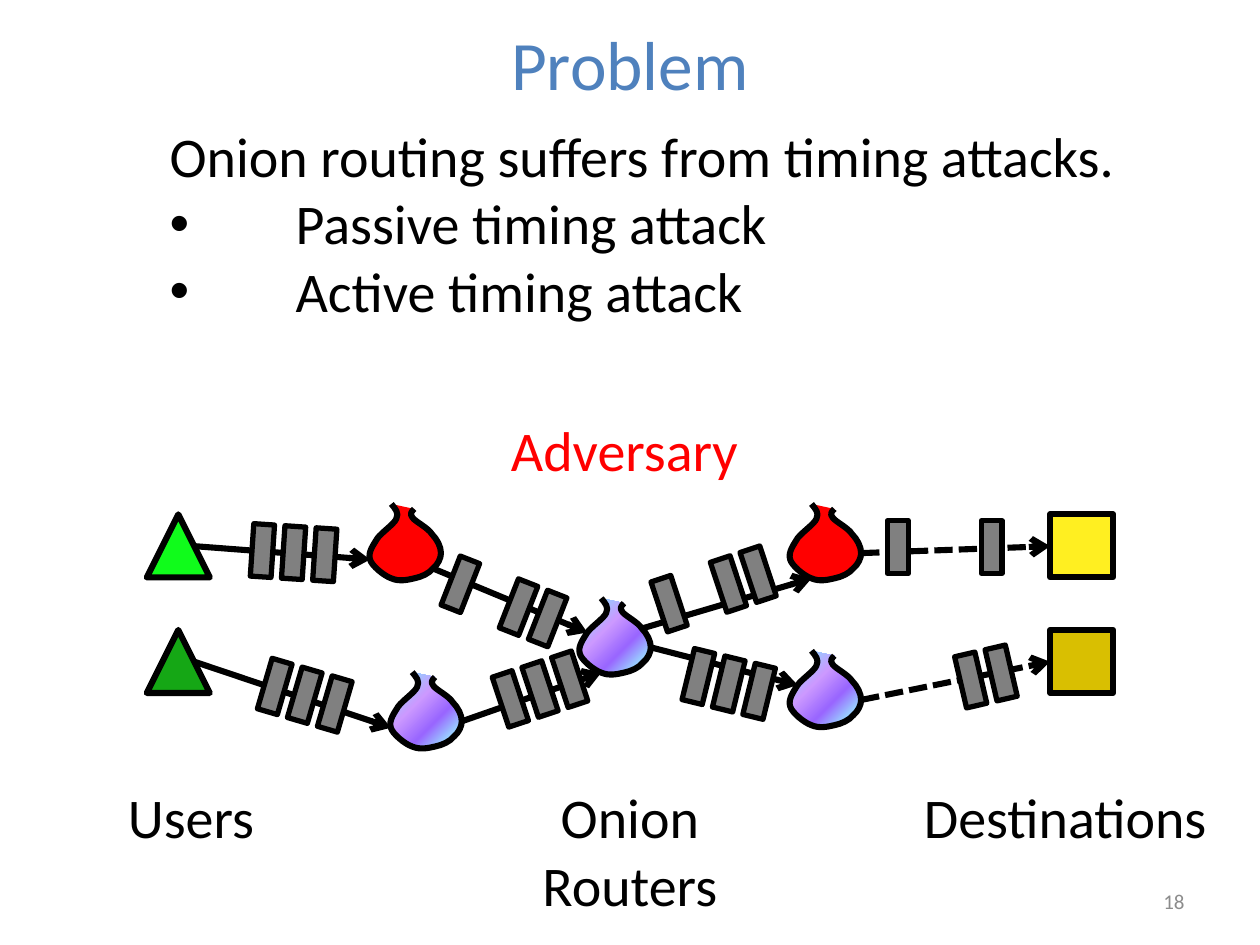
from dataclasses import dataclass
from math import cos, radians, sin

from lxml import etree
from pptx import Presentation
from pptx.dml.color import RGBColor
from pptx.enum.dml import MSO_LINE
from pptx.enum.shapes import MSO_CONNECTOR, MSO_SHAPE
from pptx.enum.text import MSO_ANCHOR, PP_ALIGN
from pptx.oxml import parse_xml
from pptx.oxml.ns import qn
from pptx.util import Cm, Pt

STRAIGHT = MSO_CONNECTOR.STRAIGHT
RECTANGLE, TRIANGLE = MSO_SHAPE.RECTANGLE, MSO_SHAPE.ISOSCELES_TRIANGLE
LEFT, CENTER, RIGHT = PP_ALIGN.LEFT, PP_ALIGN.CENTER, PP_ALIGN.RIGHT
TOP, MIDDLE = MSO_ANCHOR.TOP, MSO_ANCHOR.MIDDLE
DASH = MSO_LINE.SQUARE_DOT
DRAWING_NS = "http://schemas.openxmlformats.org/drawingml/2006/main"


@dataclass(frozen=True)
class Theme:
    font: str = "Calibri"
    title_size: float = 39.6
    body_size: float = 32
    number_size: float = 12
    link_width: float = 3.5
    packet_width: float = 3
    title: str = "4F81BD"
    ink: str = "000000"
    adversary: str = "FF0000"
    number: str = "8C8C8C"
    packet: str = "808080"
    users: tuple = ("10FC1B", "15A715")
    destinations: tuple = ("FFEF21", "D9BF01")
    onion: tuple = ((0, "CCCCFF"), (18, "99CCFF"), (36, "9966FF"),
                    (61, "CC99FF"), (82, "99CCFF"), (100, "CCCCFF"))


THEME = Theme()
NODE_SIZE = 1.27
PACKET_SIZE = (0.42, 1.06)
PACKET_STEP = 0.63

ONION_START = (0.48, 0)
ONION_CURVES = (
    ((0.56, 0.1), (0.64, 0.18), (0.58, 0.3)),
    ((0.53, 0.41), (0.3, 0.56), (0.2, 0.69)),
    ((0.13, 0.81), (0, 0.97), (0.05, 1.12)),
    ((0.08, 1.24), (0.33, 1.45), (0.48, 1.5)),
    ((0.64, 1.57), (0.81, 1.53), (0.94, 1.5)),
    ((1.09, 1.47), (1.24, 1.4), (1.32, 1.3)),
    ((1.42, 1.22), (1.48, 1.09), (1.48, 0.99)),
    ((1.48, 0.86), (1.4, 0.71), (1.3, 0.61)),
    ((1.22, 0.48), (0.97, 0.36), (0.91, 0.28)),
    ((0.84, 0.2), (0.89, 0.15), (0.94, 0.1)),
)
PORTS = {
    "left": (0.05, 1.12), "upper left": (0.2, 0.69), "bottom": (0.48, 1.5),
    "lower right": (1.32, 1.3), "right": (1.48, 0.99), "upper right": (1.3, 0.61),
    "user": (0.96, 0.64), "destination": (0, 0.64),
}
NODES = {
    "user 1": (0.42, 0.21), "user 2": (0.42, 2.54),
    "destination 1": (18.63, 0.21), "destination 2": (18.63, 2.54),
    "entry 1": (4.87, 0), "entry 2": (5.29, 3.39), "middle": (9.1, 1.9),
    "exit 1": (13.34, 0), "exit 2": (13.34, 2.96),
}
COMPROMISED = ("entry 1", "exit 1")
DASHED_LINKS = (
    ("exit 1", "right", "destination 1", "destination"),
    ("exit 2", "right", "destination 2", "destination"),
)
SOLID_LINKS = (
    ("user 1", "user", "entry 1", "left"),
    ("entry 1", "lower right", "middle", "upper left"),
    ("middle", "upper right", "exit 1", "bottom"),
    ("user 2", "user", "entry 2", "left"),
    ("entry 2", "right", "middle", "bottom"),
    ("middle", "right", "exit 2", "upper left"),
)
PACKET_BURSTS = (
    (2.54, 0.41, 3.8, (0, 1, 2)),
    (2.79, 3.15, 16.3, (0, 1, 2)),
    (7.54, 3.4, -18.3, (0, 1, 2)),
    (6.53, 1.09, 21.4, (0, 2, 3)),
    (10.74, 1.48, -18.3, (0, 2, 3)),
    (11.33, 2.95, 13.7, (0, 1, 2)),
    (15.35, 0.34, 0, (0, 3)),
    (16.82, 3.02, -13.1, (0, 1)),
)


def add_text(slide, box, *lines, size=THEME.body_size, color=THEME.ink,
             align=LEFT, anchor=TOP, bullets_from=None):
    frame = slide.shapes.add_textbox(*map(Cm, box)).text_frame
    frame.word_wrap = True
    frame.vertical_anchor = anchor
    for index, line in enumerate(lines):
        paragraph = frame.paragraphs[0] if index == 0 else frame.add_paragraph()
        paragraph.alignment = align
        run = paragraph.add_run()
        run.text = line
        run.font.name = THEME.font
        run.font.size = Pt(size)
        run.font.color.rgb = RGBColor.from_string(color)
        if bullets_from is not None and index >= bullets_from:
            properties = paragraph._p.get_or_add_pPr()
            properties.set("marL", str(Cm(2.54)))
            properties.set("indent", str(-Cm(2.54)))
            etree.SubElement(properties, qn("a:buFont"), typeface="Arial")
            etree.SubElement(properties, qn("a:buChar"), char="•")


def paint(part, fill, width=THEME.link_width):
    part.shadow.inherit = False
    part.line.color.rgb = RGBColor.from_string(THEME.ink)
    part.line.width = Pt(width)
    if isinstance(fill, str):
        part.fill.solid()
        part.fill.fore_color.rgb = RGBColor.from_string(fill)
        return
    part.fill.background()
    stops = "".join(f'<a:gs pos="{at * 1000}"><a:srgbClr val="{color}"/></a:gs>'
                    for at, color in fill)
    properties = part._element.spPr
    properties.replace(properties.find(qn("a:noFill")), parse_xml(
        f'<a:gradFill xmlns:a="{DRAWING_NS}"><a:gsLst>{stops}</a:gsLst>'
        '<a:path path="circle"><a:fillToRect l="100000" t="100000"/></a:path>'
        '</a:gradFill>'))


def add_preset(slide, preset, box, fill, width=THEME.link_width, rotation=0):
    part = slide.shapes.add_shape(preset, *map(Cm, box))
    part.rotation = rotation
    paint(part, fill, width)


def bend_segments(part):
    segments = list(part._element.iter(qn("a:lnTo")))
    for first, second, end in zip(*[iter(segments)] * 3):
        curve = etree.Element(qn("a:cubicBezTo"))
        first.addprevious(curve)
        for segment in (first, second, end):
            curve.append(segment[0])
            segment.getparent().remove(segment)


def add_onion(slide, left, top, fill):
    def place(point):
        return Cm(left + point[0]), Cm(top + point[1])

    outline = slide.shapes.build_freeform(*place(ONION_START))
    outline.add_line_segments(
        [place(point) for curve in ONION_CURVES for point in curve], close=False)
    onion = outline.convert_to_shape()
    bend_segments(onion)
    paint(onion, fill)


def add_link(slide, start, end, dashed):
    link = slide.shapes.add_connector(STRAIGHT, *map(Cm, (*start, *end)))
    link.line.color.rgb = RGBColor.from_string(THEME.ink)
    link.line.width = Pt(THEME.link_width)
    if dashed:
        link.line.dash_style = DASH
    etree.SubElement(link.line._get_or_add_ln(), qn("a:tailEnd"), type="arrow")
    etree.SubElement(link._element.spPr, qn("a:effectLst"))


def draw_network(slide, left, top):
    def port(node, side):
        return tuple(sum(parts) for parts in zip((left, top), NODES[node], PORTS[side]))

    def draw_links(links, dashed):
        for source, source_side, target, target_side in links:
            add_link(slide, port(source, source_side), port(target, target_side), dashed)

    draw_links(DASHED_LINKS, True)
    for node, (x, y) in NODES.items():
        kind, number = node.split()[0], node[-1]
        box = (left + x, top + y, NODE_SIZE, NODE_SIZE)
        if kind == "user":
            add_preset(slide, TRIANGLE, box, THEME.users[int(number) - 1])
        elif kind == "destination":
            add_preset(slide, RECTANGLE, box, THEME.destinations[int(number) - 1])
        else:
            fill = THEME.adversary if node in COMPROMISED else THEME.onion
            add_onion(slide, left + x, top + y, fill)
    draw_links(SOLID_LINKS, False)
    for x, y, angle, positions in PACKET_BURSTS:
        for position in positions:
            distance = position * PACKET_STEP
            corner = (left + x + distance * cos(radians(angle)),
                      top + y + distance * sin(radians(angle)))
            add_preset(slide, RECTANGLE, (*corner, *PACKET_SIZE), THEME.packet,
                       THEME.packet_width, angle)


def write_captions(slide, left, top):
    add_text(slide, (left, top, 4.02, 1.63), "Users")
    add_text(slide, (left + 7.83, top, 5.08, 3), "Onion Routers", align=CENTER)
    add_text(slide, (left + 15.87, top, 6.55, 1.63), "Destinations", align=CENTER)


def main():
    deck = Presentation()
    deck.slide_width, deck.slide_height = Cm(25.4), Cm(19.05)
    slide = deck.slides.add_slide(deck.slide_layouts[6])
    add_text(slide, (1.27, 0.42, 22.86, 1.69), "Problem", size=THEME.title_size,
             color=THEME.title, align=CENTER, anchor=MIDDLE)
    add_text(slide, (3.17, 2.33, 20.32, 7.09), "Onion routing suffers from timing attacks.",
             "Passive timing attack", "Active timing attack", bullets_from=1)
    add_text(slide, (9.1, 8.25, 6.98, 1.63), "Adversary", color=THEME.adversary, align=CENTER)
    draw_network(slide, 2.54, 10.16)
    write_captions(slide, 2.33, 15.66)
    add_text(slide, (18.2, 17.65, 5.93, 1.02), "18", size=THEME.number_size,
             color=THEME.number, align=RIGHT, anchor=MIDDLE)
    deck.save("out.pptx")


if __name__ == "__main__":
    main()
